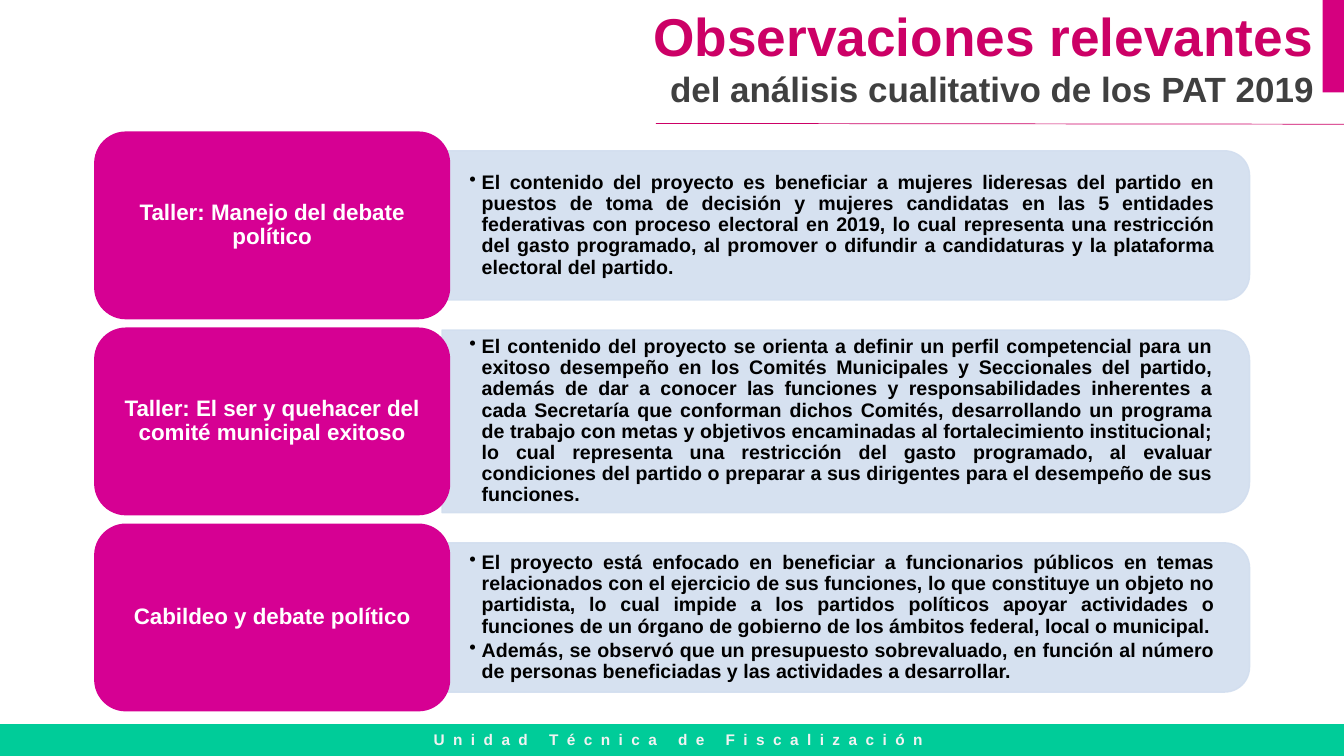
"""Build the slide on relevant observations of the 2019 PAT analysis."""
from dataclasses import dataclass

from lxml import etree
from pptx import Presentation
from pptx.dml.color import RGBColor
from pptx.enum.shapes import MSO_CONNECTOR, MSO_SHAPE
from pptx.enum.text import MSO_ANCHOR, PP_ALIGN
from pptx.oxml.ns import qn
from pptx.util import Cm, Pt

RECT = MSO_SHAPE.RECTANGLE
ROUND_RECT = MSO_SHAPE.ROUNDED_RECTANGLE
ROUND_TOP = MSO_SHAPE.ROUND_2_SAME_RECTANGLE
STRAIGHT = MSO_CONNECTOR.STRAIGHT
MIDDLE, TOP = MSO_ANCHOR.MIDDLE, MSO_ANCHOR.TOP
CENTER, RIGHT, JUSTIFY = PP_ALIGN.CENTER, PP_ALIGN.RIGHT, PP_ALIGN.JUSTIFY

WHITE = RGBColor(0xFF, 0xFF, 0xFF)
BLACK = RGBColor(0x00, 0x00, 0x00)
GREEN = RGBColor(0x00, 0xCC, 0x99)
PALE_GREY = RGBColor(0xF2, 0xF2, 0xF2)
DARK_GREY = RGBColor(0x40, 0x40, 0x40)
CRIMSON = RGBColor(0xCC, 0x00, 0x66)
PINK = RGBColor(0xD5, 0x00, 0x7F)
MAGENTA = RGBColor(0xD6, 0x00, 0x93)
PALE_BLUE = RGBColor(0xD2, 0xDE, 0xEF)

FIRST_CENTER, ROW_STEP = 5.68, 4.94
LABEL_LEFT, LABEL_W, LABEL_H = 2.39, 8.94, 4.7
PANEL_LEFT, PANEL_W = 11.14, 20.35
BULLET_INDENT = Cm(0.31)


@dataclass
class Row:
    label: str
    panel_h: float
    text_w: float
    bullets: list[str]


ROWS = [
    Row("Taller: Manejo del debate político", 3.76, 20.17, [
        "El contenido del proyecto es beneficiar a mujeres lideresas del partido en "
        "puestos de toma de decisión y mujeres candidatas en las 5 entidades "
        "federativas con proceso electoral en 2019, lo cual representa una restricción "
        "del gasto programado, al promover o difundir a candidaturas y la plataforma "
        "electoral del partido."]),
    Row("Taller: El ser y quehacer del comité municipal exitoso", 4.6, 20.12, [
        "El contenido del proyecto se orienta a definir un perfil competencial para un "
        "exitoso desempeño en los Comités Municipales y Seccionales del partido, "
        "además de dar a conocer las funciones y responsabilidades inherentes a "
        "cada Secretaría que conforman dichos Comités, desarrollando un programa "
        "de trabajo con metas y objetivos encaminadas al fortalecimiento institucional; "
        "lo cual representa una restricción del gasto programado, al evaluar "
        "condiciones del partido o preparar a sus dirigentes para el desempeño de sus "
        "funciones."]),
    Row("Cabildeo y debate político", 3.76, 20.17, [
        "El proyecto está enfocado en beneficiar a funcionarios públicos en temas "
        "relacionados con el ejercicio de sus funciones, lo que constituye un objeto no "
        "partidista, lo cual impide a los partidos políticos apoyar actividades o "
        "funciones de un órgano de gobierno de los ámbitos federal, local o municipal.",
        "Además, se observó que un presupuesto sobrevaluado, en función al número "
        "de personas beneficiadas y las actividades a desarrollar."]),
]


def add_block(s, kind, left: float, top: float, width: float, height: float,
              color: RGBColor, outlined: bool = False):
    """Add a filled shape without shadow."""
    sp = s.shapes.add_shape(kind, Cm(left), Cm(top), Cm(width), Cm(height))
    sp.shadow.inherit = False
    sp.fill.solid()
    sp.fill.fore_color.rgb = color
    if outlined:
        sp.line.color.rgb = color
        sp.line.width = Pt(1)
    else:
        sp.line.fill.background()
    return sp


def add_text_box(s, left: float, top: float, width: float, height: float):
    """Add a wrapping text box and return its text frame."""
    tf = s.shapes.add_textbox(Cm(left), Cm(top), Cm(width), Cm(height)).text_frame
    tf.word_wrap = True
    return tf


def set_insets(tf, horizontal: float, vertical: float) -> None:
    """Set equal side insets and equal vertical insets."""
    tf.margin_left = tf.margin_right = Cm(horizontal)
    tf.margin_top = tf.margin_bottom = Cm(vertical)


def write(tf, lines: list[str], size: float, color: RGBColor, align,
          anchor=MIDDLE, bulleted: bool = False) -> None:
    """Write bold Arial paragraphs into a text frame."""
    tf.vertical_anchor = anchor
    for i, line in enumerate(lines):
        p = tf.paragraphs[0] if i == 0 else tf.add_paragraph()
        p.text = line
        p.alignment = align
        if bulleted:
            pPr = p._p.get_or_add_pPr()
            pPr.set("marL", str(BULLET_INDENT))
            pPr.set("indent", str(-BULLET_INDENT))
            etree.SubElement(pPr, qn("a:buChar")).set("char", "•")
            p.space_after = Pt(2)
        for r in p.runs:
            r.font.name = "Arial"
            r.font.size = Pt(size)
            r.font.bold = True
            r.font.color.rgb = color


def add_row(s, row: Row, center: float) -> None:
    """Add the panel, its bullets and the label of one row."""
    panel_center = PANEL_LEFT + PANEL_W / 2
    panel = add_block(s, ROUND_TOP, panel_center - row.panel_h / 2,
                      center - PANEL_W / 2, row.panel_h, PANEL_W, PALE_BLUE, True)
    panel.rotation = 90
    for clr in panel._element.spPr.iter(qn("a:srgbClr")):
        etree.SubElement(clr, qn("a:alpha")).set("val", "90000")

    tf = add_text_box(s, PANEL_LEFT, center - row.panel_h / 2 + 0.2,
                      row.text_w, row.panel_h - 0.4)
    set_insets(tf, 0.69, 0.36)
    write(tf, row.bullets, 14, BLACK, JUSTIFY, bulleted=True)

    label = add_block(s, ROUND_RECT, LABEL_LEFT, center - LABEL_H / 2,
                      LABEL_W, LABEL_H, MAGENTA, True)
    set_insets(label.text_frame, 0.18, 0.08)
    write(label.text_frame, [row.label], 16, WHITE, CENTER)
    for p in [*tf.paragraphs, *label.text_frame.paragraphs]:
        p.line_spacing = 0.9


def add_frame(s) -> None:
    """Add the footer, the corner mark, the rule and the title."""
    add_block(s, RECT, 0, 18.25, 33.87, 0.8, GREEN)
    tf = add_text_box(s, 0.33, 18.25, 33.53, 0.74)
    write(tf, ["Unidad Técnica de Fiscalización"], 11, PALE_GREY, CENTER)
    tf.paragraphs[0].runs[0]._r.get_or_add_rPr().set("spc", "600")

    add_block(s, RECT, 33.33, 0, 0.54, 2.33, PINK)
    rule = s.shapes.add_connector(STRAIGHT, Cm(16.53), Cm(3.11), Cm(33.87), Cm(3.13))
    rule.line.color.rgb = CRIMSON
    rule.line.width = Pt(0.5)
    etree.SubElement(rule._element.spPr, qn("a:effectLst"))

    tf = add_text_box(s, 9.32, -0.03, 24.03, 2.95)
    write(tf, ["Observaciones relevantes", "del análisis cualitativo de los PAT 2019"],
          38, CRIMSON, RIGHT, TOP)
    font = tf.paragraphs[1].runs[0].font
    font.size = Pt(25)
    font.color.rgb = DARK_GREY


def main() -> None:
    """Build and save the presentation."""
    prs = Presentation()
    prs.slide_width, prs.slide_height = Cm(33.87), Cm(19.05)
    s = prs.slides.add_slide(prs.slide_layouts[6])
    add_frame(s)
    for i, row in enumerate(ROWS):
        add_row(s, row, FIRST_CENTER + i * ROW_STEP)
    prs.save("out.pptx")


if __name__ == "__main__":
    main()
